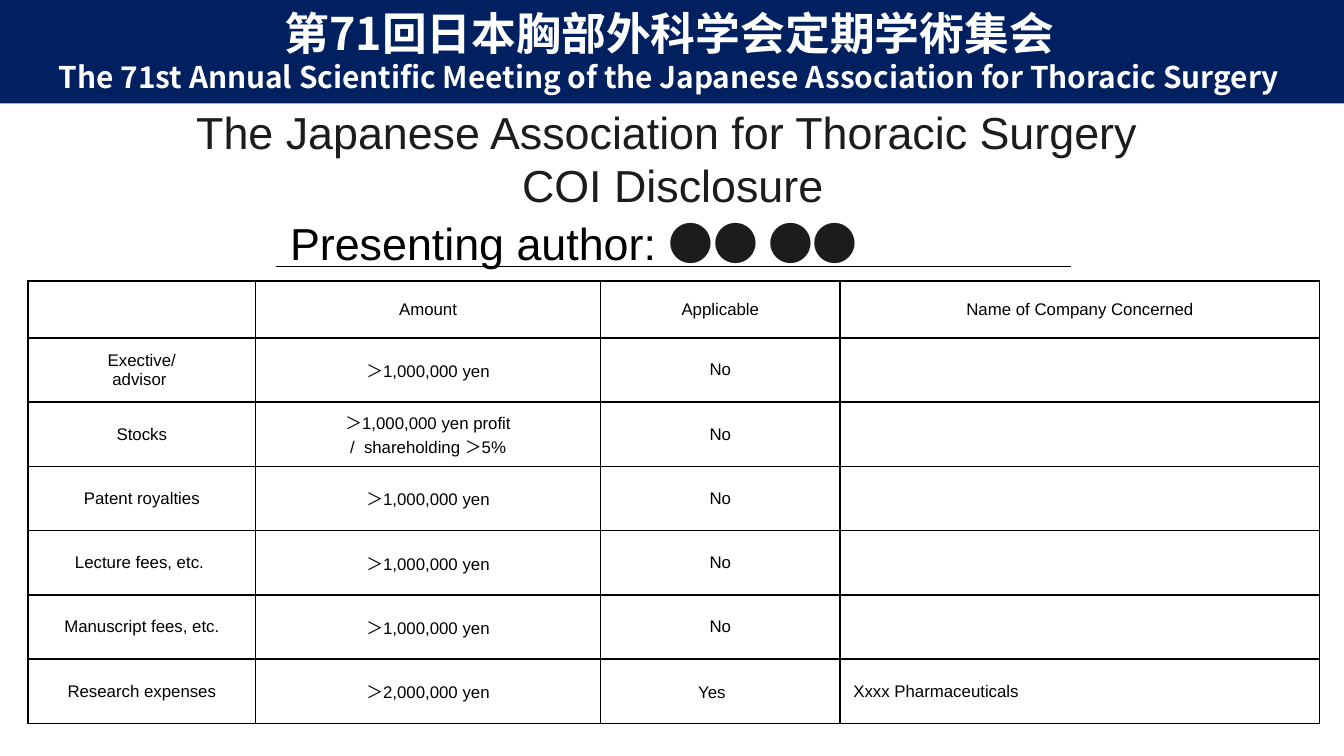
from lxml.etree import SubElement
from pptx import Presentation
from pptx.dml.color import RGBColor as Rgb
from pptx.enum.shapes import MSO_CONNECTOR as Connector, MSO_SHAPE as Shape
from pptx.enum.text import MSO_ANCHOR as Anchor, PP_ALIGN as Align
from pptx.oxml.ns import qn
from pptx.util import Inches, Pt

COLORS = {"navy": "002060", "ink": "1C1C1C", "black": "000000", "white": "FFFFFF"}
LATIN, JAPANESE, KOREAN = "Arial", "Noto Sans CJK JP", "Noto Sans CJK KR"


class DisclosureSlide:
    def __init__(self, deck):
        self.width, self.height = deck.slide_width, deck.slide_height
        self.shapes = deck.slides.add_slide(deck.slide_layouts[6]).shapes

    def across(self, percent):
        return round(self.width * percent / 100)

    def down(self, percent):
        return round(self.height * percent / 100)

    def box(self, left, top, width, height):
        return self.across(left), self.down(top), self.across(width), self.down(height)

    def color(self, name):
        return Rgb.from_string(COLORS[name])

    def style(self, run, size, color, face=LATIN, bold=False):
        font = run.font
        font.size, font.bold, font.name = Pt(size), bold, face
        font.color.rgb = self.color(color)
        if face != LATIN:
            SubElement(font._element, qn("a:ea"), typeface=face)

    def text(self, place, content, size, color, align=Align.CENTER):
        frame = self.shapes.add_textbox(*self.box(*place)).text_frame
        frame.word_wrap = True
        frame.vertical_anchor = Anchor.MIDDLE
        frame.text = content
        for line in frame.paragraphs:
            line.alignment = align
            for run in line.runs:
                self.style(run, size, color)
        return frame

    def band(self, place, lines, sizes):
        banner = self.shapes.add_shape(Shape.RECTANGLE, *self.box(*place))
        banner.shadow.inherit = False
        banner.fill.solid()
        banner.fill.fore_color.rgb = self.color("navy")
        banner.line.fill.background()
        frame = banner.text_frame
        frame.word_wrap = True
        frame.vertical_anchor = Anchor.TOP
        frame.margin_top, frame.margin_bottom = Inches(0.04), 0
        frame.text = "\n".join(lines)
        for line, size in zip(frame.paragraphs, sizes):
            line.alignment = Align.CENTER
            self.style(line.runs[0], size, "white", KOREAN, True)

    def rule(self, left, right, level):
        y = self.down(level)
        line = self.shapes.add_connector(
            Connector.STRAIGHT, self.across(left), y, self.across(right), y)
        line.line.color.rgb = self.color("black")
        line.line.width = Pt(1)
        SubElement(line._element.spPr, qn("a:effectLst"))

    def cell(self, cell, content, align):
        properties = cell._tc.get_or_add_tcPr()
        for side in ("lnL", "lnR", "lnT", "lnB"):
            border = SubElement(properties, qn(f"a:{side}"), w=str(Pt(1)))
            fill = SubElement(border, qn("a:solidFill"))
            SubElement(fill, qn("a:srgbClr"), val=COLORS["black"])
        cell.fill.background()
        cell.vertical_anchor = Anchor.MIDDLE
        cell.margin_left = cell.margin_right = Inches(0.1)
        cell.margin_top = cell.margin_bottom = Inches(0.04)
        cell.text = content
        for line in cell.text_frame.paragraphs:
            line.alignment = align
            for run in line.runs:
                self.style(run, 9, "black")

    def table(self, left, top, columns, heights, rows):
        place = self.box(left, top, sum(columns), sum(heights))
        table = self.shapes.add_table(len(rows), len(columns), *place).table
        table.first_row = table.horz_banding = False
        for column, width in zip(table.columns, columns):
            column.width = self.across(width)
        for r, (row, height) in enumerate(zip(rows, heights)):
            table.rows[r].height = self.down(height)
            for c, content in enumerate(row):
                is_company = r > 0 and c == len(columns) - 1
                self.cell(table.cell(r, c), content,
                          Align.LEFT if is_company else Align.CENTER)


def main():
    deck = Presentation()
    deck.slide_width = Inches(10)
    deck.slide_height = deck.slide_width * 9 // 16
    slide = DisclosureSlide(deck)

    million = "＞1,000,000 yen"
    disclosures = [
        ("", "Amount", "Applicable", "Name of Company Concerned"),
        ("Exective/\nadvisor ", million, "No", ""),
        ("Stocks", f"{million} profit\n/  shareholding ＞5%", "No", ""),
        ("Patent royalties", million, "No", ""),
        ("Lecture fees, etc. ", million, "No", ""),
        ("Manuscript fees, etc.", million, "No", ""),
        ("Research expenses", "＞2,000,000 yen", "Yes　", "Xxxx Pharmaceuticals"),
    ]
    slide.table(2.1, 37.2, [16.9, 25.7, 17.8, 35.7], [7.5] + [8.5] * 6, disclosures)

    slide.text((5, 12.8, 90.1, 16.2),
               "The Japanese Association for Thoracic Surgery \nCOI Disclosure",
               24, "ink")
    author = slide.text((20.6, 27.6, 59.4, 8.9), "Presenting author: ",
                        24, "black", Align.LEFT)
    author_name = author.paragraphs[0].add_run()
    author_name.text = "●● ●●"
    slide.style(author_name, 24, "ink", JAPANESE)
    slide.rule(20.5, 79.7, 35.25)

    slide.band((-0.4, 0, 100.4, 13.7),
               ["第71回日本胸部外科学会定期学術集会",
                "The 71st Annual Scientific Meeting of the Japanese Association"
                " for Thoracic Surgery"],
               [24, 16])
    deck.save("out.pptx")


if __name__ == "__main__":
    main()
